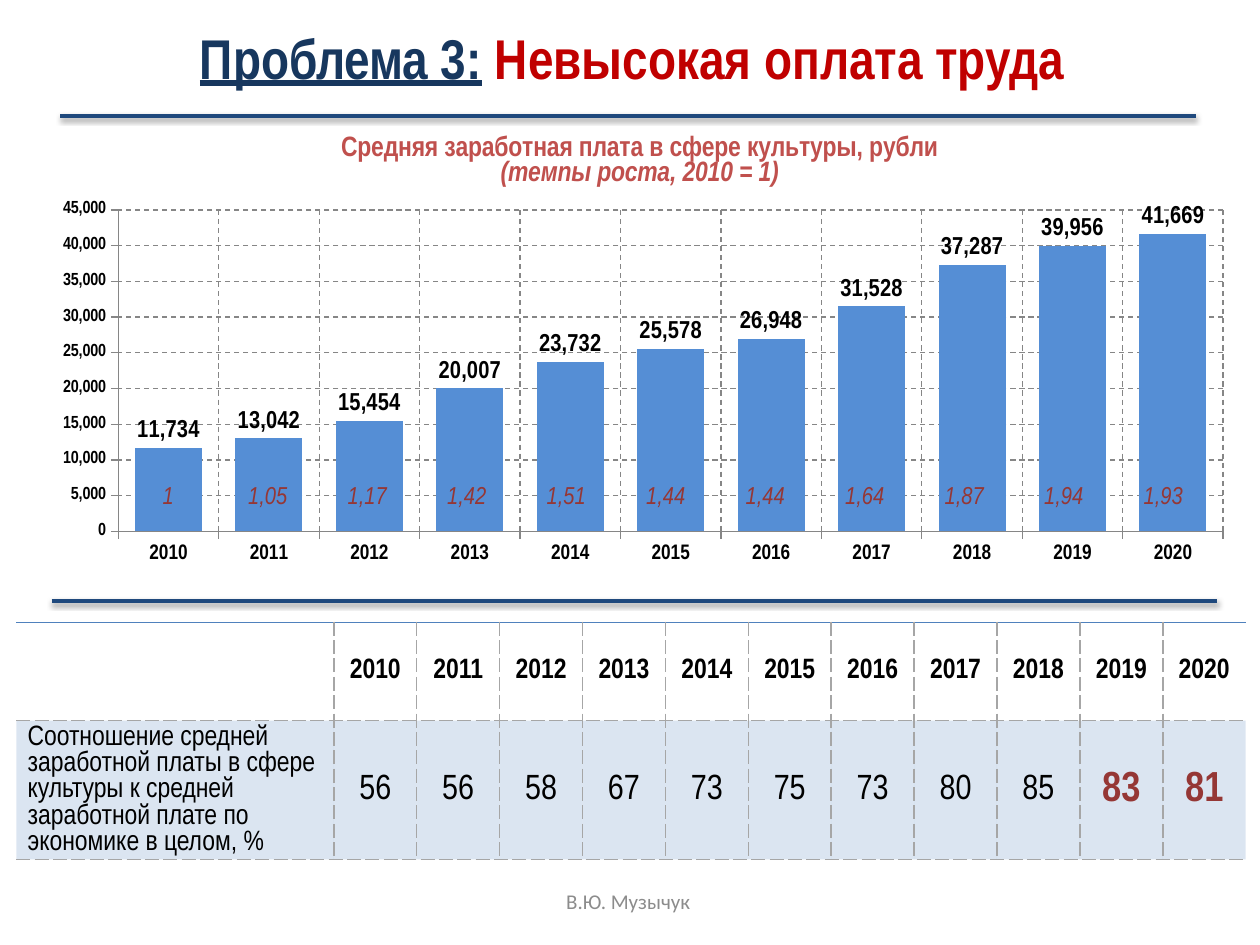
from dataclasses import dataclass

from lxml.etree import SubElement
from pptx import Presentation
from pptx.chart.data import CategoryChartData
from pptx.dml.color import RGBColor
from pptx.enum.chart import XL_CHART_TYPE as CT, XL_LABEL_POSITION as LP, XL_TICK_MARK as TM
from pptx.enum.dml import MSO_LINE_DASH_STYLE as DASH
from pptx.enum.shapes import MSO_CONNECTOR as CONN
from pptx.enum.text import MSO_ANCHOR as ANCHOR, MSO_AUTO_SIZE as FIT, PP_ALIGN as AL
from pptx.oxml import parse_xml
from pptx.oxml.ns import nsdecls, qn
from pptx.util import Inches, Pt


@dataclass(frozen=True)
class Theme:
    """Colours, fonts and type sizes of the slide."""
    narrow: str = "Arial Narrow"
    sans: str = "Calibri"
    black: str = "000000"
    navy: str = "17375E"
    rule: str = "1F497D"
    red: str = "C00000"
    dark_red: str = "953735"
    coral: str = "C0504D"
    bar: str = "558ED5"
    accent: str = "4F81BD"
    grid: str = "868686"
    border: str = "A6A6A6"
    footer: str = "8C8C8C"
    title_size: int = 32
    strong_size: int = 24
    value_size: int = 20
    body_size: int = 16
    label_size: int = 14
    small_size: int = 12
    axis_size: int = 10


T = Theme()
COLS, ROWS = 100, 75
YEARS = [str(y) for y in range(2010, 2021)]
WAGES = [11734, 13042, 15454, 20007, 23732, 25578, 26948, 31528, 37287, 39956, 41669]
GROWTH = ["1", "1,05", "1,17", "1,42", "1,51", "1,44", "1,44", "1,64", "1,87", "1,94", "1,93"]
RATIOS = [56, 56, 58, 67, 73, 75, 73, 80, 85, 83, 81]
RATIO_LABEL = ("Соотношение средней заработной платы в сфере культуры "
               "к средней заработной плате по экономике в целом, %")


def grid(*units):
    """Turn grid units, a hundredth of the slide's width each, into lengths."""
    return [Inches(u / 10) for u in units]


def style(font, size, color, name=T.narrow, bold=False, italic=False):
    """Format one font."""
    font.size, font.name, font.bold, font.italic = Pt(size), name, bold, italic
    font.color.rgb = RGBColor.from_string(color)


def add_run(p, text, size, color, **look):
    """Append a formatted run to a paragraph."""
    r = p.add_run()
    r.text = text
    style(r.font, size, color, **look)
    return r


def add_title(s):
    """Fill and place the slide title."""
    sp = s.shapes.title
    sp.left, sp.top, sp.width, sp.height = grid(5.2, 0.8, 90, 8.5)
    tf = sp.text_frame
    tf.vertical_anchor, tf.auto_size = ANCHOR.MIDDLE, FIT.NONE
    p = tf.paragraphs[0]
    p.alignment, p.line_spacing = AL.CENTER, 0.8
    parts = [("Проблема 3:", T.navy), (" ", T.dark_red), ("Невысокая оплата труда", T.red)]
    for i, (text, color) in enumerate(parts):
        add_run(p, text, T.title_size, color, bold=True).font.underline = i == 0


def add_rule(s, left, right, y):
    """Draw a horizontal rule with a soft shadow."""
    x1, x2, y = grid(left, right, y)
    line = s.shapes.add_connector(CONN.STRAIGHT, x1, y, x2, y)
    line.line.width = Pt(2)
    line.line.color.rgb = RGBColor.from_string(T.rule)
    line._element.spPr.append(parse_xml(
        f'<a:effectLst {nsdecls("a")}><a:outerShdw blurRad="{Pt(3.1)}" dist="{Pt(1.6)}" '
        f'dir="5400000" rotWithShape="0"><a:srgbClr val="{T.black}"><a:alpha val="38000"/>'
        '</a:srgbClr></a:outerShdw></a:effectLst>'))


def set_layout(parent, index, target=None, **place):
    """Give a chart part a manual place in shares of the chart."""
    for old in parent.findall(qn("c:layout")):
        parent.remove(old)
    layout = parse_xml(f'<c:layout {nsdecls("c")}><c:manualLayout/></c:layout>')
    if target:
        SubElement(layout[0], qn("c:layoutTarget")).set("val", target)
    for key in ("x", "y"):
        SubElement(layout[0], qn(f"c:{key}Mode")).set("val", "edge")
    for key, share in place.items():
        SubElement(layout[0], qn(f"c:{key}")).set("val", str(share))
    parent.insert(index, layout)


def format_axis(axis, size):
    """Format an axis with dashed gridlines."""
    axis.has_major_gridlines = True
    axis.major_tick_mark, axis.minor_tick_mark = TM.OUTSIDE, TM.NONE
    style(axis.tick_labels.font, size, T.black, bold=True)
    for part in (axis, axis.major_gridlines):
        part.format.line.color.rgb = RGBColor.from_string(T.grid)
        part.format.line.width = Pt(0.75)
    axis.major_gridlines.format.line.dash_style = DASH.DASH


def add_wage_chart(s):
    """Add the column chart of average wages."""
    data = CategoryChartData()
    data.categories = YEARS
    data.add_series("Series 1", WAGES)
    chart = s.shapes.add_chart(CT.COLUMN_CLUSTERED, *grid(4.1, 9.6, 94.5, 37.2), data).chart
    style(chart.font, T.axis_size, T.black, name=T.sans)
    chart.has_legend = False
    tf = chart.chart_title.text_frame
    add_run(tf.paragraphs[0], "Средняя заработная плата в сфере культуры, рубли",
            T.body_size, T.coral, bold=True)
    add_run(tf.add_paragraph(), "(темпы роста, 2010 = 1)", T.body_size, T.coral,
            bold=True, italic=True)
    set_layout(chart.chart_title._element, 1, x=0.24, y=0.02)
    set_layout(chart._chartSpace.chart.plotArea, 0, "inner", x=0.056, y=0.19, w=0.928, h=0.686)
    format_axis(chart.category_axis, T.small_size)
    axis = chart.value_axis
    format_axis(axis, T.axis_size)
    axis.minimum_scale, axis.maximum_scale, axis.major_unit = 0, 45000, 5000
    axis.tick_labels.number_format = "#,##0"
    axis.tick_labels.number_format_is_linked = True
    plot = chart.plots[0]
    plot.gap_width, plot.vary_by_categories = 50, False
    fill = plot.series[0].format.fill
    fill.solid()
    fill.fore_color.rgb = RGBColor.from_string(T.bar)
    plot.has_data_labels = True
    labels = plot.data_labels
    labels.show_value, labels.position = True, LP.OUTSIDE_END
    labels.number_format, labels.number_format_is_linked = "#,##0", False
    style(labels.font, T.label_size, T.black, bold=True)


def add_grid_table(s, left, top, widths, heights):
    """Add an unstyled table with the given column widths and row heights."""
    frame = s.shapes.add_table(len(heights), len(widths),
                               *grid(left, top, sum(widths), sum(heights)))
    table = frame.table
    table.first_row = table.horz_banding = False
    table._tbl.tblPr.find(qn("a:tableStyleId")).text = "{2D5ABB26-0587-4C30-8999-92F81FD0307C}"
    for col, width in zip(table.columns, grid(*widths)):
        col.width = width
    for row, height in zip(table.rows, grid(*heights)):
        row.height = height
    return table


def fill_cell(cell, text, size, color, tight=True, align=AL.CENTER, **look):
    """Write a cell's text, with thin margins if tight."""
    cell.fill.background()
    cell.vertical_anchor = ANCHOR.MIDDLE
    if tight:
        cell.margin_left = cell.margin_right = cell.margin_top = Inches(0.01)
        cell.margin_bottom = 0
    p = cell.text_frame.paragraphs[0]
    p.alignment = align
    add_run(p, text, size, color, **look)


def tint_cell(cell):
    """Fill a cell with the accent colour at a fifth of its strength."""
    cell.fill.solid()
    cell.fill.fore_color.rgb = RGBColor.from_string(T.accent)
    color = cell._tc.tcPr.find(qn("a:solidFill"))[0]
    SubElement(color, qn("a:alpha")).set("val", "20000")


def add_borders(cell, sides, solid_top):
    """Draw dashed borders on the sides, the top one solid if asked."""
    for i, side in enumerate(sides):
        color, dash = (T.accent, "solid") if side == "T" and solid_top else (T.border, "sysDash")
        cell._tc.get_or_add_tcPr().insert(i, parse_xml(
            f'<a:ln{side} {nsdecls("a")} w="{Pt(1)}"><a:solidFill><a:srgbClr val="{color}"/>'
            f'</a:solidFill><a:prstDash val="{dash}"/></a:ln{side}>'))


def add_growth_table(s):
    """Lay the growth rates over the columns."""
    table = add_grid_table(s, 9.4, 36.7, [7.9] * len(GROWTH), [5.5])
    for cell, rate in zip(table.iter_cells(), GROWTH):
        fill_cell(cell, rate, T.label_size, T.dark_red, italic=True)


def add_ratio_table(s):
    """Add the table of wage ratios by year."""
    n = len(YEARS)
    table = add_grid_table(s, 1.3, 49.4, [25.2] + [6.58] * n, [7.8, 11])
    table.cell(0, 0).fill.background()
    label = table.cell(1, 0)
    fill_cell(label, RATIO_LABEL, T.body_size, T.black, align=AL.LEFT)
    label.text_frame.paragraphs[0]._p.get_or_add_pPr().set("marL", str(Inches(0.08)))
    for c, (year, ratio) in enumerate(zip(YEARS, RATIOS), 1):
        strong = c > n - 2
        fill_cell(table.cell(0, c), year, T.body_size, T.black, tight=False, bold=True)
        fill_cell(table.cell(1, c), str(ratio), T.strong_size if strong else T.value_size,
                  T.dark_red if strong else T.black, bold=strong)
    for c in range(n + 1):
        tint_cell(table.cell(1, c))
        sides = ("L" if c else "") + ("R" if c < n else "") + "TB"
        for r in range(2):
            add_borders(table.cell(r, c), sides, r == 0)


def add_footer(s):
    """Add the author's name at the foot."""
    tf = s.shapes.add_textbox(*grid(34.2, 69.5, 31.7, 4)).text_frame
    tf.word_wrap, tf.vertical_anchor = True, ANCHOR.MIDDLE
    p = tf.paragraphs[0]
    p.alignment = AL.CENTER
    add_run(p, "В.Ю. Музычук ", T.small_size, T.footer, name=T.sans)


def main():
    """Build and save the slide."""
    prs = Presentation()
    prs.slide_width, prs.slide_height = grid(COLS, ROWS)
    s = prs.slides.add_slide(prs.slide_layouts[5])
    add_title(s)
    add_rule(s, 4.8, 94.9, 9.2)
    add_rule(s, 4.1, 96.6, 47.7)
    add_wage_chart(s)
    add_growth_table(s)
    add_ratio_table(s)
    add_footer(s)
    prs.save("out.pptx")


if __name__ == "__main__":
    main()
